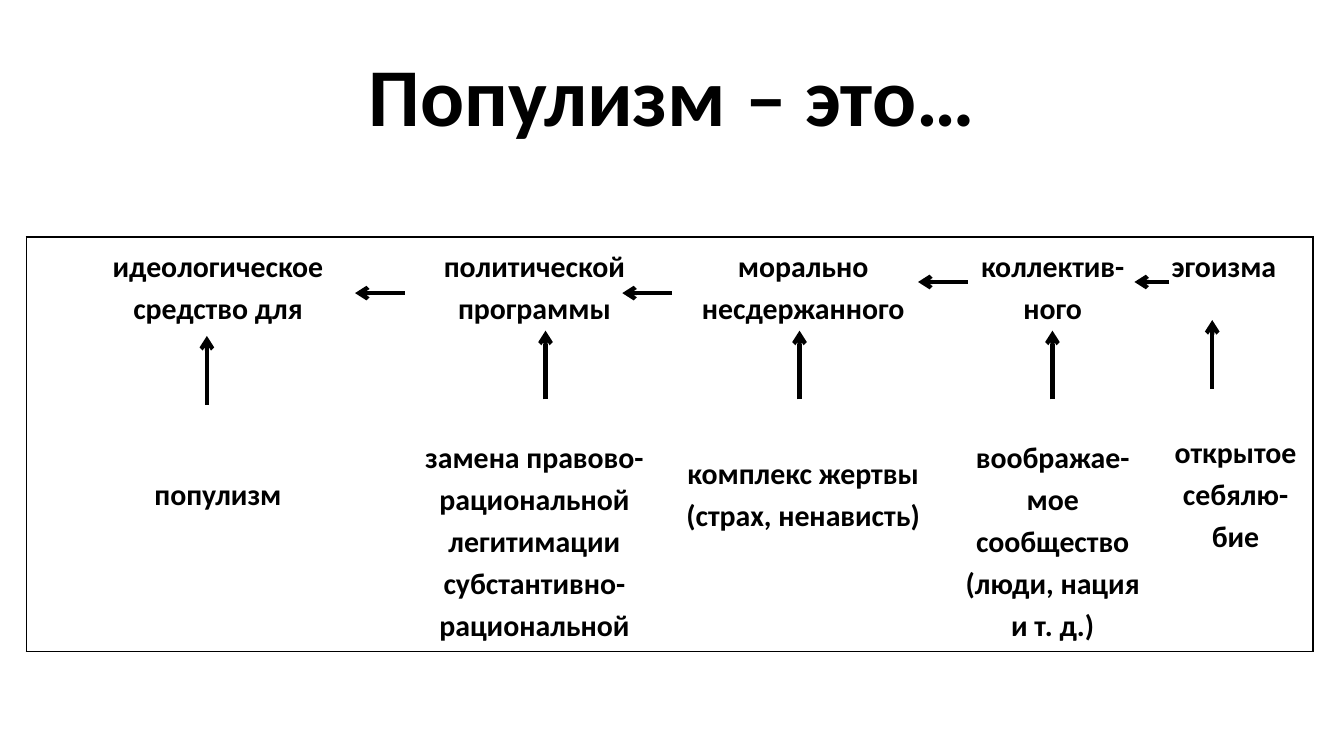
import pptx
import pptx.dml.color
import pptx.enum.shapes
import pptx.enum.text
import pptx.oxml
import pptx.oxml.ns
import pptx.util

Cm = pptx.util.Cm
Pt = pptx.util.Pt
Align = pptx.enum.text.PP_ALIGN
Anchor = pptx.enum.text.MSO_ANCHOR

BLACK = "000000"
COLS = [7.24, 4.72, 5.44, 3.99, 2.92]
ROWS = [1.68, 5.99]
CELLS = [
    [
        ("идеологическое\nсредство для", Anchor.TOP),
        ("политической программы", Anchor.TOP),
        ("мoрально несдержанного", Anchor.TOP),
        ("коллектив-ного", Anchor.TOP),
        ("эгоизма", Anchor.TOP),
    ],
    [
        ("пoпулизм", Anchor.MIDDLE),
        ("замена правово-рациональной легитимации субстантивно-рациональной",
         Anchor.BOTTOM),
        ("комплекс жертвы (страх, ненависть)", Anchor.MIDDLE),
        ("воображае-мое coобщество\n(люди, нация и т. д.)", Anchor.BOTTOM),
        ("открытое себялю-бие", Anchor.MIDDLE),
    ],
]
# Arrow tips: x, y
UP_TIPS = [(3.91, 6.35), (10.31, 6.25), (15.11, 6.25), (19.89, 6.25), (22.91, 6.05)]
UP_LEN = 1.3
# Arrow tips and lengths: x, y, length
LEFT_TIPS = [(6.71, 5.54, 0.94), (11.76, 5.54, 0.94),
             (17.35, 5.33, 0.94), (21.44, 5.33, 0.66)]


def color(code):
    return pptx.dml.color.RGBColor.from_string(code)


def add_node(parent, tag, **attrs):
    node = pptx.oxml.parse_xml(f"<{tag} {pptx.oxml.ns.nsdecls('a')}/>")
    for name, value in attrs.items():
        node.set(name, value)
    parent.append(node)
    return node


def write(frame, text, size=16, align=Align.CENTER, anchor=Anchor.TOP, space=None):
    """Fill a text frame, one paragraph for each line of text."""
    frame.word_wrap = True
    frame.vertical_anchor = anchor
    for i, line in enumerate(text.split("\n")):
        para = frame.paragraphs[0] if i == 0 else frame.add_paragraph()
        para.alignment = align
        para.line_spacing = space
        run = para.add_run()
        run.text = line
        run.font.name = "Calibri"
        run.font.size = Pt(size)
        run.font.bold = True
        run.font.color.rgb = color(BLACK)


def add_title(slide, text):
    title = slide.shapes.title
    title.left, title.top = Cm(1.27), Cm(0.58)
    title.width, title.height = Cm(22.86), Cm(2.39)
    write(title.text_frame, text, size=44, anchor=Anchor.MIDDLE)


def set_edges(cell, drawn):
    """Draw a black line on the named sides and none on the others."""
    props = cell._tc.get_or_add_tcPr()
    for side in "LRTB":
        edge = add_node(props, f"a:ln{side}", w=str(Pt(1)))
        if side in drawn:
            fill = add_node(edge, "a:solidFill")
            add_node(fill, "a:srgbClr", val=BLACK)
        else:
            add_node(edge, "a:noFill")


def add_grid(slide):
    frame = slide.shapes.add_table(
        len(ROWS), len(COLS), Cm(0.5), Cm(4.48), Cm(sum(COLS)), Cm(sum(ROWS)))
    table = frame.table
    table.first_row = table.horz_banding = False
    for col, width in zip(table.columns, COLS):
        col.width = Cm(width)
    for row, height in zip(table.rows, ROWS):
        row.height = Cm(height)
    last = len(COLS) - 1
    for r, line in enumerate(CELLS):
        for c, (text, anchor) in enumerate(line):
            cell = table.cell(r, c)
            set_edges(cell, "TB"[r] + {0: "L", last: "R"}.get(c, ""))
            cell.fill.background()
            align = Align.LEFT if (r, c) == (0, last) else Align.CENTER
            write(cell.text_frame, text, align=align, space=1.15)
            cell.vertical_anchor = anchor


def add_arrow(slide, start, tip):
    ends = [Cm(v) for v in (*start, *tip)]
    arrow = slide.shapes.add_connector(
        pptx.enum.shapes.MSO_CONNECTOR.STRAIGHT, *ends)
    arrow.line.color.rgb = color(BLACK)
    arrow.line.width = Pt(2.25)
    add_node(arrow.line._get_or_add_ln(), "a:tailEnd", type="arrow")
    add_node(arrow._element.spPr, "a:effectLst")


def main():
    deck = pptx.Presentation()
    deck.slide_width, deck.slide_height = Cm(25.4), Cm(14.29)
    slide = deck.slides.add_slide(deck.slide_layouts[5])
    add_title(slide, "Популизм ‒ это…")
    add_grid(slide)
    for x, y in UP_TIPS:
        add_arrow(slide, (x, y + UP_LEN), (x, y))
    for x, y, length in LEFT_TIPS:
        add_arrow(slide, (x + length, y), (x, y))
    deck.save("out.pptx")


if __name__ == "__main__":
    main()
